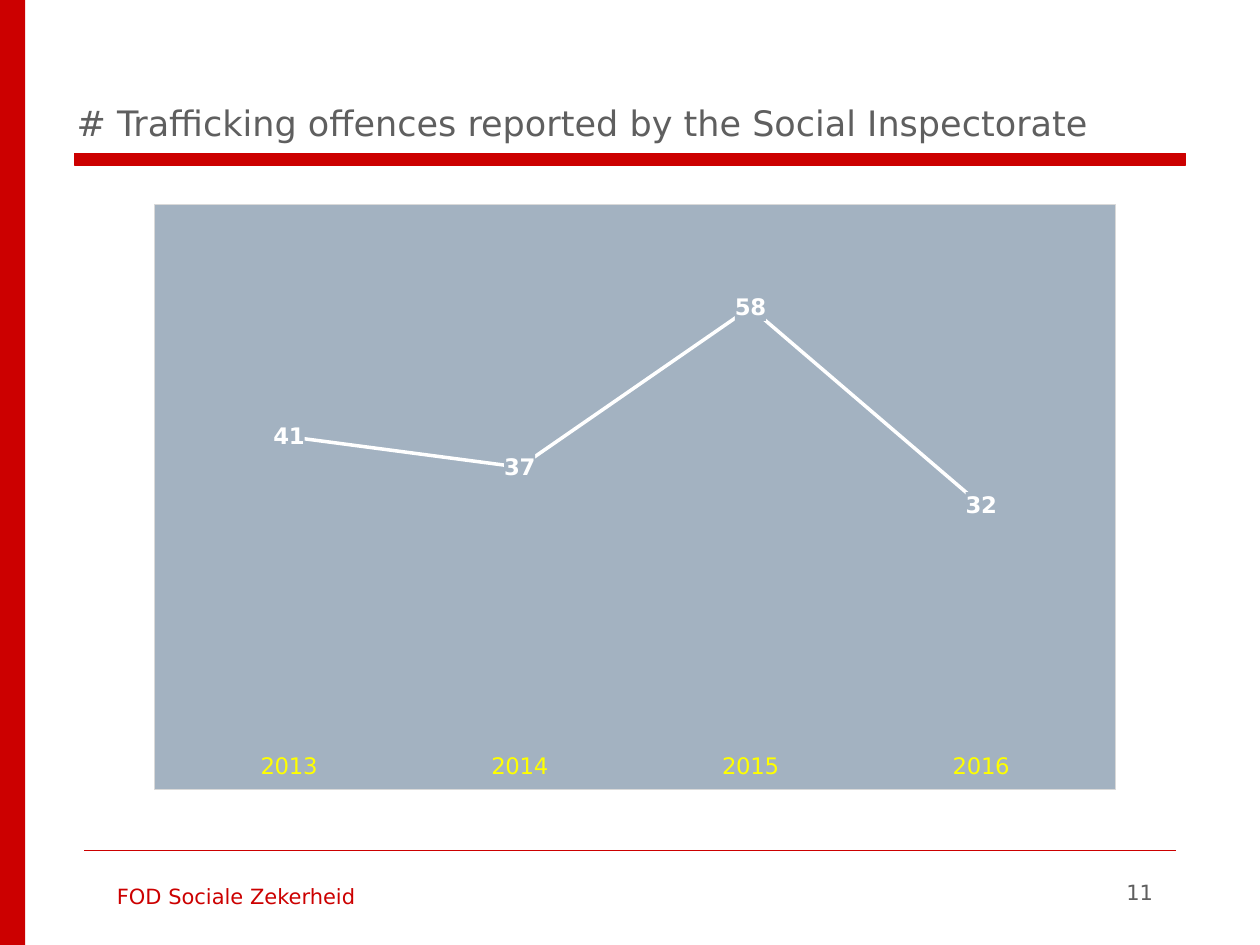
from dataclasses import dataclass

from lxml.etree import SubElement
from pptx import Presentation
from pptx.chart.data import CategoryChartData
from pptx.dml.color import RGBColor
from pptx.enum.chart import XL_CHART_TYPE, XL_LABEL_POSITION, XL_MARKER_STYLE, XL_TICK_MARK
from pptx.enum.shapes import MSO_CONNECTOR, MSO_SHAPE
from pptx.enum.text import MSO_ANCHOR, PP_ALIGN
from pptx.oxml import parse_xml
from pptx.oxml.ns import nsdecls, qn
from pptx.util import Inches, Pt


@dataclass(frozen=True)
class Theme:
    """Colours, font and type sizes of the slide."""
    font: str = "DejaVu Sans"
    red: str = "CC0000"
    grey: str = "5F5F5F"
    white: str = "FFFFFF"
    yellow: str = "FFFF00"
    panel: str = "A3B2C1"
    border: str = "D9D9D9"
    title_size: int = 20
    chart_size: int = 13
    footer_size: int = 12


THEME = Theme()


def style_font(font, size, color, bold=False):
    """Set the face, size, colour and weight of a font."""
    font.name = THEME.font
    font.size = Pt(size)
    font.bold = bold
    font.color.rgb = RGBColor.from_string(color)


def add_text(slide, text, box, *, size, color, align=PP_ALIGN.LEFT,
             anchor=MSO_ANCHOR.TOP, line_spacing=1.0):
    """Add a one-paragraph text box."""
    frame = slide.shapes.add_textbox(*map(Inches, box)).text_frame
    frame.word_wrap = True
    frame.vertical_anchor = anchor
    paragraph = frame.paragraphs[0]
    paragraph.alignment = align
    paragraph.line_spacing = line_spacing
    run = paragraph.add_run()
    run.text = text
    style_font(run.font, size, color)


def add_bar(slide, box, outlined=False):
    """Add a solid red bar."""
    bar = slide.shapes.add_shape(MSO_SHAPE.RECTANGLE, *map(Inches, box))
    bar.shadow.inherit = False
    bar.fill.solid()
    bar.fill.fore_color.rgb = RGBColor.from_string(THEME.red)
    if outlined:
        bar.line.color.rgb = RGBColor.from_string(THEME.red)
        bar.line.width = Pt(0.75)
    else:
        bar.line.fill.background()


def add_header(slide, box, title):
    """Add the title with the red rule under it."""
    left, top, width, height = box
    add_bar(slide, (left + 0.08, top + height + 0.03, 8.82, 0.09), outlined=True)
    add_text(slide, title, box, size=THEME.title_size, color=THEME.grey,
             anchor=MSO_ANCHOR.BOTTOM)


def add_footer(slide, box, organisation, number):
    """Add the thin rule, the organisation and the slide number."""
    left, top, width, height = box
    rule = slide.shapes.add_connector(
        MSO_CONNECTOR.STRAIGHT, *map(Inches, (left, top, left + width, top)))
    rule.line.color.rgb = RGBColor.from_string(THEME.red)
    rule.line.width = Pt(0.25)
    SubElement(rule._element.spPr, qn("a:effectLst"))
    add_text(slide, organisation, (left + 0.16, top + 0.15, 4.8, 0.52),
             size=THEME.footer_size, color=THEME.red, line_spacing=1.3)
    add_text(slide, number, (left + width - 2.16, top + 0.18, 2.08, 0.5),
             size=THEME.footer_size, color=THEME.grey, align=PP_ALIGN.RIGHT)


def chart_panel(color, border=""):
    """Return chart shape properties with a fill and an optional border."""
    outline = (f'<a:ln w="{Pt(0.75)}"><a:solidFill><a:srgbClr val="{border}"/>'
               '</a:solidFill></a:ln>') if border else ""
    return parse_xml(f'<c:spPr {nsdecls("c", "a")}><a:solidFill><a:srgbClr val="{color}"/>'
                     f'</a:solidFill>{outline}</c:spPr>')


def set_plot_layout(chart, x, y, width, height):
    """Place the inner plot area by fractions of the chart."""
    plot_area = chart._chartSpace.chart.plotArea
    for layout in plot_area.findall(qn("c:layout")):
        plot_area.remove(layout)
    sizes = "".join(f'<c:{tag} val="{value}"/>' for tag, value in
                    zip("xywh", (x, y, width, height)))
    plot_area.insert(0, parse_xml(
        f'<c:layout {nsdecls("c")}><c:manualLayout><c:layoutTarget val="inner"/>'
        f'<c:xMode val="edge"/><c:yMode val="edge"/>{sizes}</c:manualLayout></c:layout>'))


def add_offences_chart(slide, box, offences):
    """Add the line chart of offences per year."""
    data = CategoryChartData()
    data.categories = list(offences)
    data.add_series("Series 1", list(offences.values()))
    chart = slide.shapes.add_chart(
        XL_CHART_TYPE.LINE, *map(Inches, box), data).chart
    chart.has_title = False
    chart.has_legend = False
    style_font(chart.font, THEME.chart_size, THEME.white)
    chart._chartSpace.chart.addnext(chart_panel(THEME.panel, THEME.border))
    set_plot_layout(chart, 0.02, 0.02, 0.96, 0.91)

    value_axis = chart.value_axis
    value_axis.minimum_scale, value_axis.maximum_scale = 0, 70
    value_axis.has_major_gridlines = False
    value_axis.visible = False
    category_axis = chart.category_axis
    category_axis.major_tick_mark = XL_TICK_MARK.NONE
    category_axis.format.line.fill.background()
    style_font(category_axis.tick_labels.font, THEME.chart_size, THEME.yellow)

    plot = chart.plots[0]
    plot.vary_by_categories = False
    series = plot.series[0]
    series.smooth = False
    series.marker.style = XL_MARKER_STYLE.NONE
    series.format.line.color.rgb = RGBColor.from_string(THEME.white)
    series.format.line.width = Pt(2)
    labels = series.data_labels
    labels.show_value = True
    labels.position = XL_LABEL_POSITION.CENTER
    style_font(labels.font, THEME.chart_size, THEME.white, bold=True)
    labels._element.find(qn("c:txPr")).addprevious(chart_panel(THEME.panel))


def main():
    """Build and save the slide."""
    presentation = Presentation()
    presentation.slide_width = Inches(10)
    presentation.slide_height = Inches(7.5)
    slide = presentation.slides.add_slide(presentation.slide_layouts[6])
    add_bar(slide, (0, 0, 0.2, 7.5))
    add_header(slide, (0.51, 0.68, 9.13, 0.51),
               "# Trafficking offences reported by the Social Inspectorate")
    add_offences_chart(slide, (1.22, 1.62, 7.64, 4.65),
                       {"2013": 41, "2014": 37, "2015": 58, "2016": 32})
    add_footer(slide, (0.67, 6.75, 8.66, 0.75), "FOD Sociale Zekerheid", "11")
    presentation.save("out.pptx")


if __name__ == "__main__":
    main()
